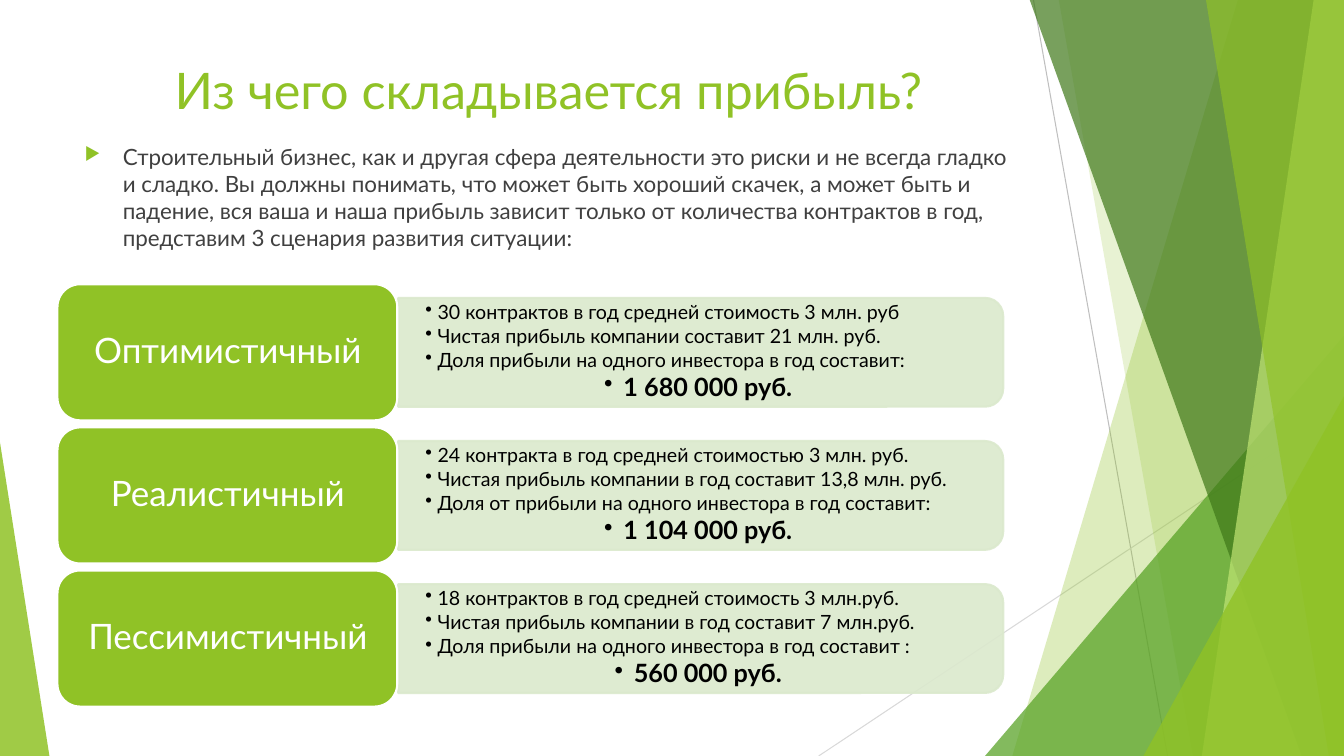
from dataclasses import dataclass

import pptx
import pptx.dml.color
import pptx.enum.shapes
import pptx.enum.text
import pptx.oxml.ns
import pptx.oxml.xmlchemy
import pptx.util
from lxml import etree

Inches = pptx.util.Inches
Pt = pptx.util.Pt
SHAPES = pptx.enum.shapes.MSO_SHAPE
ALIGN = pptx.enum.text.PP_ALIGN
ANCHOR = pptx.enum.text.MSO_ANCHOR
qn = pptx.oxml.ns.qn


@dataclass(frozen=True)
class Theme:
    font: str = "Lato"
    lime: str = "90C226"
    pale_lime: str = "C0E474"
    green: str = "54A021"
    forest: str = "3F7819"
    panel: str = "DBE9CD"
    white: str = "FFFFFF"
    black: str = "000000"
    body: str = "404040"
    gray: str = "BFBFBF"
    light_gray: str = "D9D9D9"
    title_size: float = 36
    intro_size: float = 16
    label_size: float = 25
    detail_size: float = 14
    share_size: float = 18


THEME = Theme()
WIDTH, HEIGHT = 13.33, 7.5
CARD_TOP, CARD_PITCH, CARD_HEIGHT = 2.82, 1.42, 1.35

TITLE = "Из чего складывается прибыль?"
INTRO = (
    "Строительный бизнес, как и другая сфера деятельности это риски и не всегда "
    "гладко и сладко. Вы должны понимать, что может быть хороший скачек, а может "
    "быть и падение, вся ваша и наша прибыль зависит только от количества "
    "контрактов в год, представим 3 сценария развития ситуации:"
)
SCENARIOS = [
    ("Оптимистичный",
     ["30 контрактов в год средней стоимость 3 млн. руб",
      "Чистая прибыль компании составит 21 млн. руб.",
      "Доля прибыли на одного инвестора в год составит:"],
     "1 680 000 руб."),
    ("Реалистичный",
     ["24 контракта в год средней стоимостью 3 млн. руб.",
      "Чистая прибыль компании в год составит 13,8 млн. руб.",
      "Доля от прибыли на одного инвестора в год составит:"],
     "1 104 000 руб."),
    ("Пессимистичный",
     ["18 контрактов в год средней стоимость 3 млн.руб.",
      "Чистая прибыль компании в год составит 7 млн.руб.",
      "Доля прибыли на одного инвестора в год составит :"],
     "560 000 руб."),
]


def rgb(color):
    return pptx.dml.color.RGBColor.from_string(color)


def paint(shape, fill, opacity=100, outline=None):
    """Set fill and outline; the opacity, in percent, applies to both."""
    shape.shadow.inherit = False
    shape.fill.solid()
    shape.fill.fore_color.rgb = rgb(fill)
    if outline:
        shape.line.color.rgb = rgb(outline)
        shape.line.width = Pt(1.5)
    else:
        shape.line.fill.background()
    if opacity < 100:
        for color in shape.element.spPr.iter(qn("a:srgbClr")):
            etree.SubElement(color, qn("a:alpha"), val=str(opacity * 1000))


def add_preset(slide, kind, box, fill, opacity=100, outline=None):
    shape = slide.shapes.add_shape(kind, *map(Inches, box))
    paint(shape, fill, opacity, outline)
    return shape


def add_triangle(slide, box, apex, fill, opacity):
    triangle = add_preset(slide, SHAPES.ISOSCELES_TRIANGLE, box, fill, opacity)
    triangle.adjustments[0] = apex


def add_shard(slide, top_x, bottom_x, fill, opacity):
    """Fill the area from a slanted edge to the right side of the slide."""
    corners = [(WIDTH, -0.01), (WIDTH, HEIGHT), (bottom_x, HEIGHT)]
    builder = slide.shapes.build_freeform(Inches(top_x), Inches(-0.01), 1.0)
    builder.add_line_segments([(Inches(x), Inches(y)) for x, y in corners])
    paint(builder.convert_to_shape(), fill, opacity)


def add_thin_line(slide, start, end, color):
    line = slide.shapes.add_connector(
        pptx.enum.shapes.MSO_CONNECTOR.STRAIGHT, *map(Inches, start + end))
    line.line.color.rgb = rgb(color)
    line.line.width = Pt(0.75)
    etree.SubElement(line.element.spPr, qn("a:effectLst"))


def set_frame(frame, anchor, side=0.1, edge=0.05):
    values = {
        "word_wrap": True,
        "auto_size": pptx.enum.text.MSO_AUTO_SIZE.NONE,
        "vertical_anchor": anchor,
        "margin_left": Inches(side), "margin_right": Inches(side),
        "margin_top": Inches(edge), "margin_bottom": Inches(edge),
    }
    for name, value in values.items():
        setattr(frame, name, value)


def add_text_frame(slide, box, anchor, side=0.1, edge=0.05):
    frame = slide.shapes.add_textbox(*map(Inches, box)).text_frame
    set_frame(frame, anchor, side, edge)
    return frame


def write(paragraph, text, size, color, bold=False, **spacing):
    run = paragraph.add_run()
    run.text = text
    run.font.color.rgb = rgb(color)
    font_values = {"name": THEME.font, "size": Pt(size), "bold": bold}
    for target, values in ((run.font, font_values), (paragraph, spacing)):
        for name, value in values.items():
            setattr(target, name, value)


def add_bullet(paragraph, char, indent, color=None, percent=100):
    props = paragraph._p.get_or_add_pPr()
    props.set("marL", str(Inches(indent)))
    props.set("indent", str(Inches(-indent)))
    if color:
        bullet_color = etree.SubElement(props, qn("a:buClr"))
        etree.SubElement(bullet_color, qn("a:srgbClr"), val=color)
    etree.SubElement(props, qn("a:buSzPct"), val=str(percent * 1000))
    etree.SubElement(props, qn("a:buChar"), char=char)


def add_backdrop(slide):
    add_thin_line(slide, (10.25, 0), (11.58, HEIGHT), THEME.gray)
    add_thin_line(slide, (WIDTH, 4.03), (8.12, HEIGHT), THEME.light_gray)
    add_shard(slide, 12.28, 10.04, THEME.lime, 30)
    add_shard(slide, 10.5, 11.83, THEME.lime, 20)
    add_triangle(slide, (9.77, 3.33, 3.56, 4.17), 1, THEME.green, 72)
    add_shard(slide, 10.21, 12.91, THEME.forest, 70)
    add_shard(slide, 13.03, 11.92, THEME.pale_lime, 70)
    add_shard(slide, 11.96, 13.18, THEME.lime, 65)
    add_triangle(slide, (11.34, 3.93, 1.99, 3.57), 1, THEME.lime, 80)
    add_triangle(slide, (0, 4.39, 0.49, 3.11), 0, THEME.lime, 85)


def add_title(slide):
    title = slide.shapes.title
    box = {"left": 0.74, "top": 0.54, "width": 9.4, "height": 0.83}
    for name, value in box.items():
        setattr(title, name, Inches(value))
    set_frame(title.text_frame, ANCHOR.TOP)
    write(title.text_frame.paragraphs[0], TITLE, THEME.title_size, THEME.lime,
          alignment=ALIGN.CENTER)


def add_intro(slide):
    frame = add_text_frame(slide, (0.74, 1.37, 9.4, 1.3), ANCHOR.TOP)
    paragraph = frame.paragraphs[0]
    write(paragraph, INTRO, THEME.intro_size, THEME.body, space_before=Pt(10))
    add_bullet(paragraph, "▶", 0.38, THEME.lime, 80)


def add_scenario(slide, top, name, details, share):
    middle = top + CARD_HEIGHT / 2
    panel = add_preset(slide, SHAPES.ROUND_2_SAME_RECTANGLE,
                       (6.41, middle - 3, 1.08, 6), THEME.panel, 90, THEME.panel)
    panel.rotation = 90

    frame = add_text_frame(slide, (3.95, middle - 0.485, 5.95, 0.97),
                           ANCHOR.MIDDLE, 0.27, 0.14)
    lines = [(text, THEME.detail_size, False, ALIGN.LEFT, 0.12) for text in details]
    lines.append((share, THEME.share_size, True, ALIGN.CENTER, 0.19))
    for i, (text, size, bold, alignment, indent) in enumerate(lines):
        paragraph = frame.add_paragraph() if i else frame.paragraphs[0]
        write(paragraph, text, size, THEME.black, bold, alignment=alignment,
              level=1, line_spacing=0.9, space_after=Pt(0.15 * size))
        add_bullet(paragraph, "•", indent)

    add_preset(slide, SHAPES.ROUNDED_RECTANGLE, (0.57, top, 3.37, CARD_HEIGHT),
               THEME.lime, outline=THEME.white)
    label = add_text_frame(slide, (0.64, middle - 0.61, 3.24, 1.22), ANCHOR.MIDDLE)
    write(label.paragraphs[0], name, THEME.label_size, THEME.white,
          alignment=ALIGN.CENTER, line_spacing=0.9)


def main():
    deck = pptx.Presentation()
    deck.slide_width, deck.slide_height = Inches(WIDTH), Inches(HEIGHT)
    slide = deck.slides.add_slide(deck.slide_layouts.get_by_name("Title Only"))
    add_backdrop(slide)
    add_title(slide)
    add_intro(slide)
    for row, scenario in enumerate(SCENARIOS):
        add_scenario(slide, CARD_TOP + row * CARD_PITCH, *scenario)
    deck.save("out.pptx")


if __name__ == "__main__":
    main()
